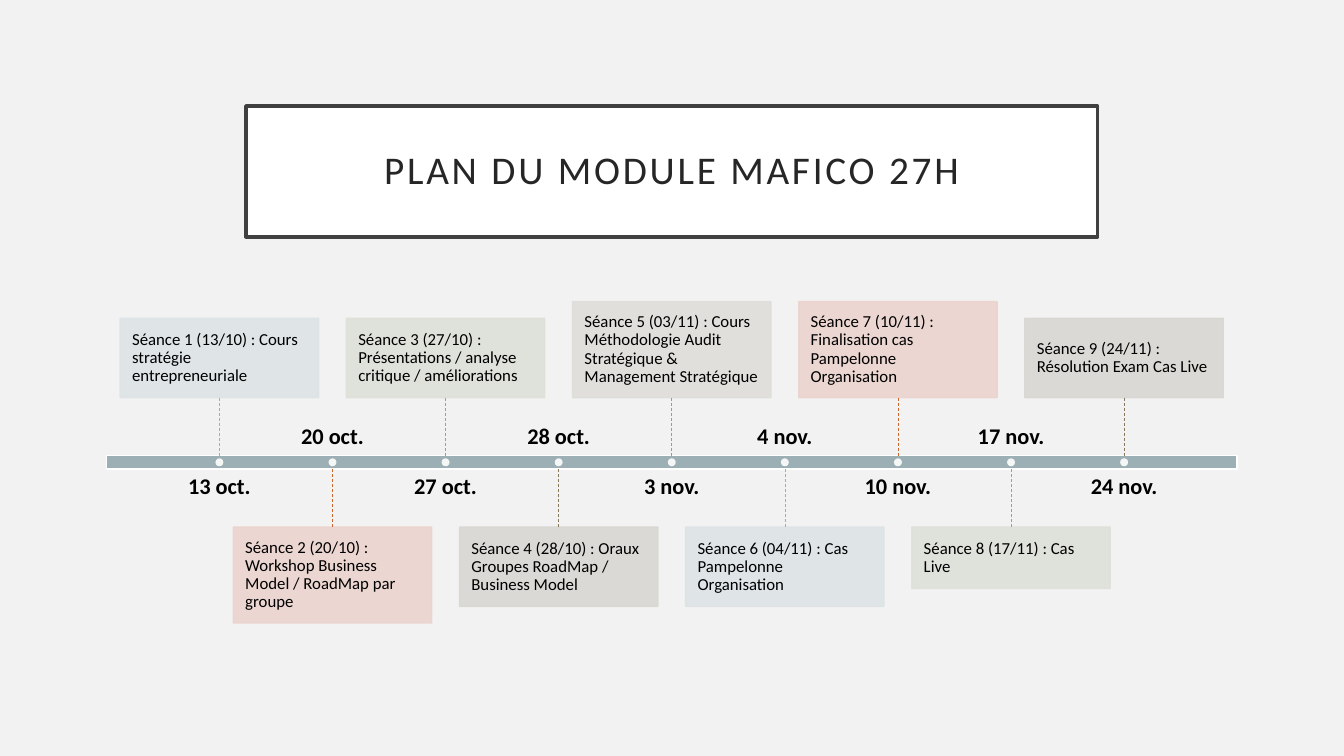
from pptx import Presentation
from pptx.dml.color import RGBColor
from pptx.enum import dml, shapes, text
from pptx.oxml import parse_xml
from pptx.oxml.ns import nsdecls
from pptx.util import Cm, Pt

TITLE = "PLAN DU MODULE MAFICO 27H"
# date, card text, card height (cm), tint, connector colour
SESSIONS = [
    ("13 oct.", "Séance 1 (13/10) : Cours stratégie entrepreneuriale", 2.0, "blue_tint", "blue"),
    ("20 oct.", "Séance 2 (20/10) : Workshop Business Model / RoadMap par groupe", 2.42, "red_tint", "red"),
    ("27 oct.", "Séance 3 (27/10) : Présentations / analyse critique / améliorations", 2.0,
     "green_tint", "green"),
    ("28 oct.", "Séance 4 (28/10) : Oraux Groupes RoadMap / Business Model", 2.0, "brown_tint", "brown"),
    ("3 nov.", "Séance 5 (03/11) : Cours Méthodologie Audit Stratégique & Management Stratégique", 2.42,
     "grey_tint", "grey"),
    ("4 nov.", "Séance 6 (04/11) : Cas Pampelonne Organisation", 2.0, "blue_tint", "blue"),
    ("10 nov.", "Séance 7 (10/11) : Finalisation cas Pampelonne Organisation", 2.42, "red_tint", "red"),
    ("17 nov.", "Séance 8 (17/11) : Cas Live", 1.55, "green_tint", "green"),
    ("24 nov.", "Séance 9 (24/11) : Résolution Exam Cas Live", 2.0, "brown_tint", "brown"),
]
COLORS = {
    "background": "F2F2F2", "white": "FFFFFF", "frame": "404040", "title": "262626", "black": "000000",
    "blue": "9BAFB5", "red": "C96731", "green": "9CA383", "brown": "87795D", "grey": "A0988C",
    "blue_tint": "DEE3E5", "red_tint": "EBD3CE", "green_tint": "DEE0D9", "brown_tint": "D9D7D2",
    "grey_tint": "DFDDDA",
}
BAR_X, BAR_Y, BAR_W, BAR_H = 2.68, 11.48, 28.5, 0.34
STEP = BAR_W / (len(SESSIONS) + 1)
CARD_W, STEM = 5.0, 1.46
LABEL_W, LABEL_H, LABEL_GAP = 4.57, 0.96, 0.16
DOT = 0.2


def rgb(name):
    return RGBColor.from_string(COLORS[name])


def set_opacity(fmt, percent):
    """Make a solid fill partly transparent."""
    color = fmt._xPr.find(".//{*}srgbClr")
    color.append(parse_xml(f'<a:alpha {nsdecls("a")} val="{percent * 1000}"/>'))


def write(sp, words, size=12, color="black", bold=False, align="LEFT", anchor="MIDDLE", inset=0.0):
    tf = sp.text_frame
    tf.word_wrap = True
    tf.auto_size = text.MSO_AUTO_SIZE.NONE
    tf.vertical_anchor = text.MSO_ANCHOR[anchor]
    tf.margin_left = tf.margin_right = tf.margin_top = tf.margin_bottom = Cm(inset)
    p = tf.paragraphs[0]
    p.alignment = text.PP_ALIGN[align]
    p.line_spacing = 0.9
    r = p.add_run()
    r.text = words
    r.font.name, r.font.size, r.font.bold = "Calibri", Pt(size), bold
    r.font.color.rgb = rgb(color)
    return r


def add_block(slide, x, y, w, h, fill, line=None, kind="RECTANGLE", opacity=100):
    sp = slide.shapes.add_shape(shapes.MSO_SHAPE[kind], Cm(x), Cm(y), Cm(w), Cm(h))
    sp.shadow.inherit = False
    sp.fill.solid()
    sp.fill.fore_color.rgb = rgb(fill)
    set_opacity(sp.fill, opacity)
    if line:
        sp.line.color.rgb = rgb(line)
        sp.line.width = Pt(1)
        set_opacity(sp.line.fill, opacity)
    else:
        sp.line.fill.background()
    return sp


def add_title(slide):
    sp = slide.shapes.title
    sp.left, sp.top, sp.width, sp.height = Cm(6.2), Cm(2.67), Cm(21.46), Cm(3.3)
    sp.fill.solid()
    sp.fill.fore_color.rgb = rgb("white")
    sp.line.color.rgb = rgb("frame")
    sp.line.width = Pt(2.5)
    r = write(sp, TITLE, size=28, color="title", align="CENTER", inset=0.5)
    r.font._element.set("spc", "200")


def add_session(slide, bar, index, session):
    """Odd sessions have their card above the bar and their date below; even ones the reverse."""
    date, words, height, tint, color = session
    x = BAR_X + STEP * (index + 1)
    above = index % 2 == 0
    bar_bottom = BAR_Y + BAR_H
    if above:
        bar_edge, card_y = BAR_Y, BAR_Y - STEM - height
        label_y, anchor = bar_bottom + LABEL_GAP, "TOP"
    else:
        bar_edge, card_y = bar_bottom, bar_bottom + STEM
        label_y, anchor = BAR_Y - LABEL_GAP - LABEL_H, "BOTTOM"

    label = slide.shapes.add_textbox(Cm(x - LABEL_W / 2), Cm(label_y), Cm(LABEL_W), Cm(LABEL_H))
    write(label, date, size=16, bold=True, align="CENTER", anchor=anchor)
    card = add_block(slide, x - CARD_W / 2, card_y, CARD_W, height, tint, line=tint, opacity=90)
    write(card, words, inset=0.3)

    stem = slide.shapes.add_connector(shapes.MSO_CONNECTOR.STRAIGHT, Cm(x), Cm(card_y), Cm(x), Cm(bar_edge))
    stem.begin_connect(card, 2 if above else 0)
    if index == len(SESSIONS) // 2:
        stem.end_connect(bar, 0 if above else 2)
    stem.line.color.rgb = rgb(color)
    stem.line.width = Pt(0.5)
    stem.line.dash_style = dml.MSO_LINE.DASH
    stem._element.spPr.append(parse_xml(f'<a:effectLst {nsdecls("a")}/>'))
    add_block(slide, x - DOT / 2, BAR_Y + (BAR_H - DOT) / 2, DOT, DOT, "white", kind="OVAL", opacity=90)


def main():
    prs = Presentation()
    prs.slide_width, prs.slide_height = Cm(33.87), Cm(19.05)
    slide = prs.slides.add_slide(prs.slide_layouts[5])
    slide.background.fill.solid()
    slide.background.fill.fore_color.rgb = rgb("background")
    add_title(slide)
    bar = add_block(slide, BAR_X, BAR_Y, BAR_W, BAR_H, "blue", line="white")
    for index, session in enumerate(SESSIONS):
        add_session(slide, bar, index, session)
    prs.save("out.pptx")


if __name__ == "__main__":
    main()
